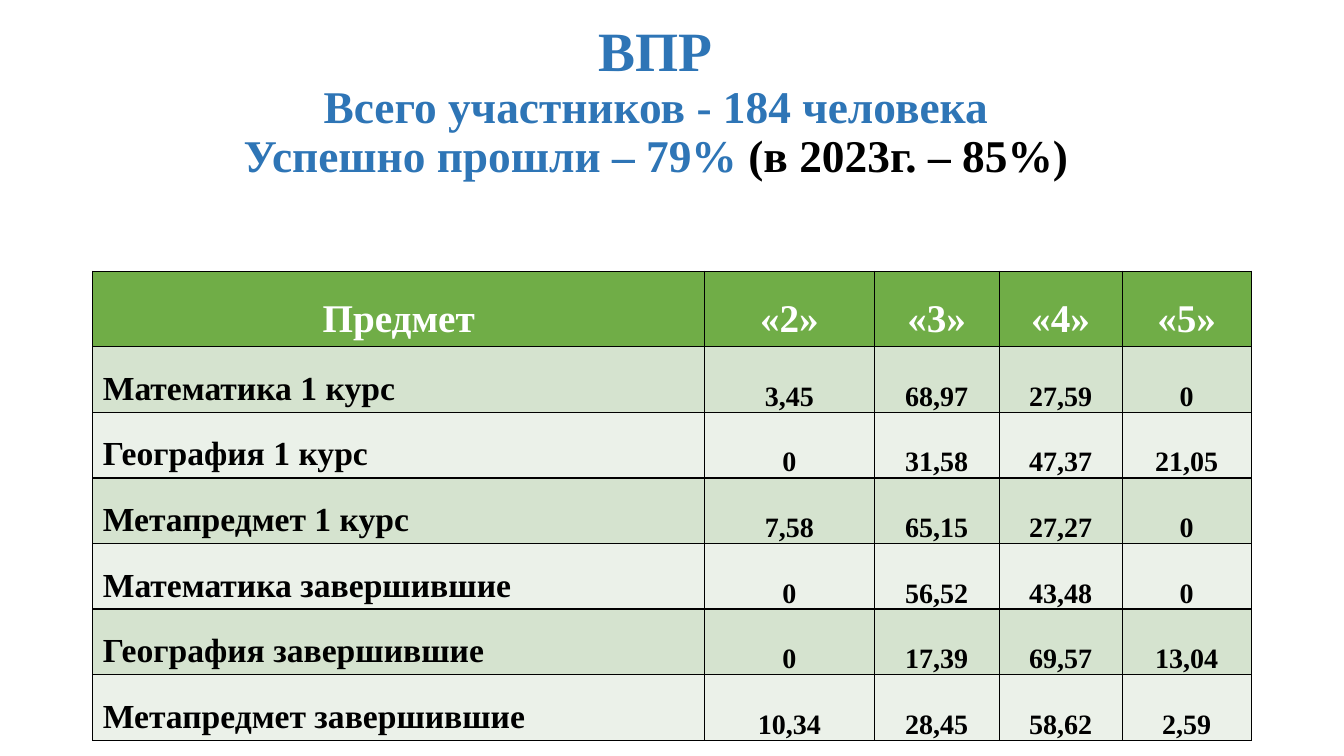
import pptx
import pptx.dml.color
import pptx.enum.text
import pptx.oxml
import pptx.oxml.ns
import pptx.util

Inches = pptx.util.Inches
Pt = pptx.util.Pt
ALIGN = pptx.enum.text.PP_ALIGN
ANCHOR = pptx.enum.text.MSO_ANCHOR

FACE = "Times New Roman"
COLORS = {
    "blue": "2E75B6",
    "black": "000000",
    "white": "FFFFFF",
    "head": "70AD47",
    "dark": "D5E3CF",
    "light": "EBF1E9",
}
TITLE = [
    [("ВПР", 39.6, "blue")],
    [("Всего участников - 184 человека", 32.4, "blue")],
    [("Успешно прошли – 79% ", 32.4, "blue"),
     ("(в 2023г. – 85%)", 32.4, "black")],
]
WIDTHS = [6.07, 1.68, 1.24, 1.22, 1.28]
ROWS = [
    ["Предмет", "«2»", "«3»", "«4»", "«5»"],
    ["Математика 1 курс", "3,45", "68,97", "27,59", "0"],
    ["География 1 курс", "0", "31,58", "47,37", "21,05"],
    ["Метапредмет 1 курс", "7,58", "65,15", "27,27", "0"],
    ["Математика завершившие", "0", "56,52", "43,48", "0"],
    ["География завершившие", "0", "17,39", "69,57", "13,04"],
    ["Метапредмет завершившие", "10,34", "28,45", "58,62", "2,59"],
]


def color(name):
    return pptx.dml.color.RGBColor.from_string(COLORS[name])


def add_title(slide):
    box = slide.shapes.add_textbox(
        Inches(0.68), Inches(0.19), Inches(11.65), Inches(2.24))
    frame = box.text_frame
    frame.word_wrap = True
    frame.vertical_anchor = ANCHOR.TOP
    para = frame.paragraphs[0]
    para.alignment = ALIGN.CENTER
    para.line_spacing = 0.9
    para.font.name = FACE
    para.font.bold = True
    for i, line in enumerate(TITLE):
        if i:
            para.add_line_break()
        for text, size, tint in line:
            run = para.add_run()
            run.text = text
            run.font.size = Pt(size)
            run.font.color.rgb = color(tint)


def add_border(cell):
    """Draw a thin black line on all four sides of the cell."""
    props = cell._tc.get_or_add_tcPr()
    for i, side in enumerate(("lnL", "lnR", "lnT", "lnB")):
        props.insert(i, pptx.oxml.parse_xml(
            f'<a:{side} {pptx.oxml.ns.nsdecls("a")} w="{Pt(1)}"><a:solidFill>'
            f'<a:srgbClr val="{COLORS["black"]}"/></a:solidFill></a:{side}>'))


def fill_cell(cell, text, size, tint, back, align):
    cell.text = text
    cell.margin_bottom = 0
    para = cell.text_frame.paragraphs[0]
    para.alignment = align
    para.line_spacing = 1.5
    para.font.name = FACE
    para.font.size = Pt(size)
    para.font.bold = True
    para.font.color.rgb = color(tint)
    cell.fill.solid()
    cell.fill.fore_color.rgb = color(back)
    add_border(cell)


def set_low(cell):
    """Seat the text at the bottom of the cell, almost without margins."""
    cell.vertical_anchor = ANCHOR.BOTTOM
    cell.margin_left = cell.margin_right = cell.margin_top = Inches(0.01)


def add_marks(slide):
    table = slide.shapes.add_table(
        len(ROWS), len(WIDTHS), Inches(0.92), Inches(2.69),
        Inches(sum(WIDTHS)), Inches(0.41 * len(ROWS))).table
    for col, width in zip(table.columns, WIDTHS):
        col.width = Inches(width)
    for r, row in enumerate(ROWS):
        table.rows[r].height = Inches(0.41)
        for c, text in enumerate(row):
            cell = table.cell(r, c)
            back = "dark" if r % 2 else "light"
            if r == 0:
                fill_cell(cell, text, 28, "white", "head", ALIGN.CENTER)
            elif c == 0:
                fill_cell(cell, text, 24, "black", back, ALIGN.LEFT)
            else:
                fill_cell(cell, text, 20, "black", back, ALIGN.CENTER)
                set_low(cell)


def main():
    deck = pptx.Presentation()
    deck.slide_width = Inches(13.33)
    deck.slide_height = Inches(7.5)
    slide = deck.slides.add_slide(deck.slide_layouts[6])
    add_title(slide)
    add_marks(slide)
    deck.save("out.pptx")


if __name__ == "__main__":
    main()
